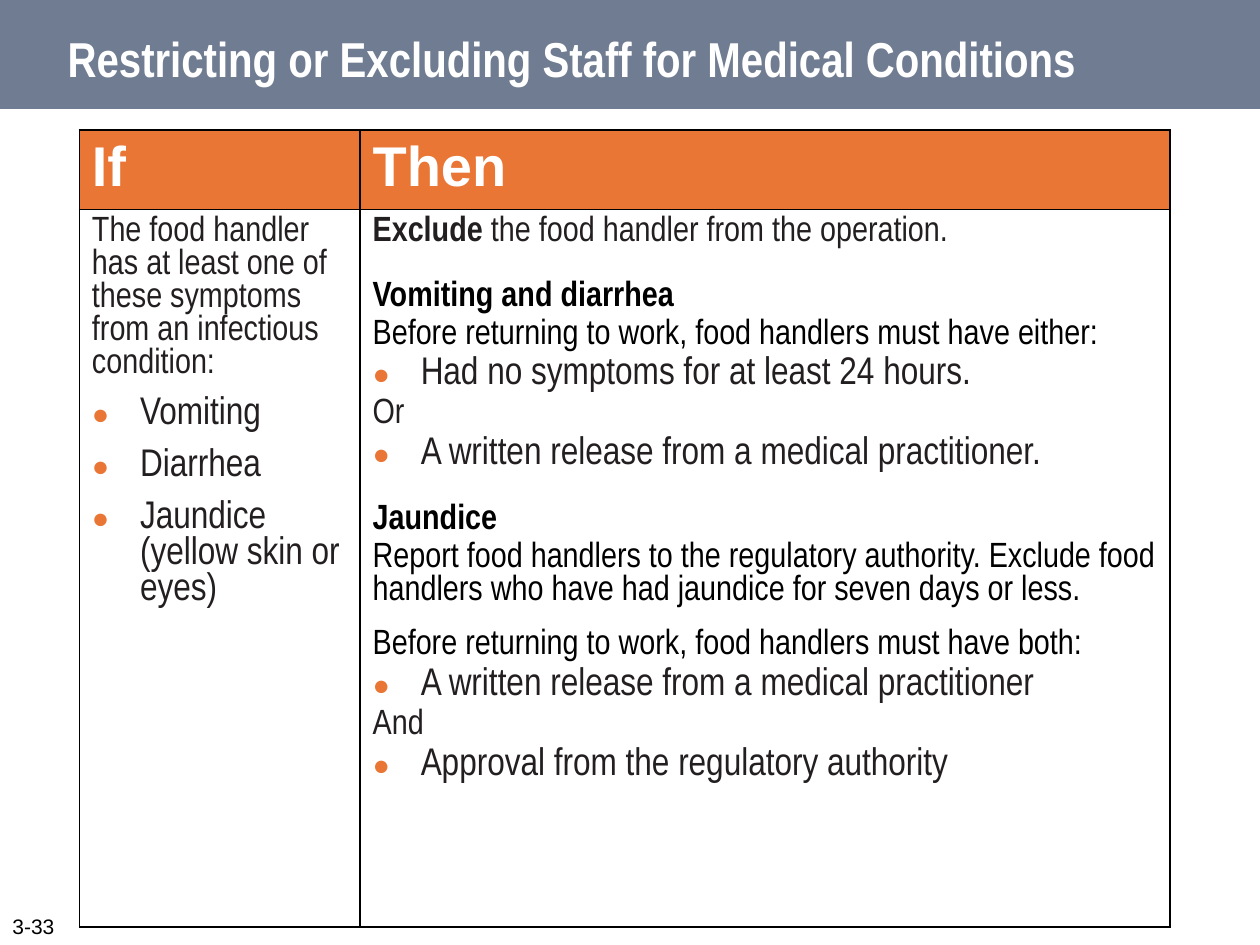
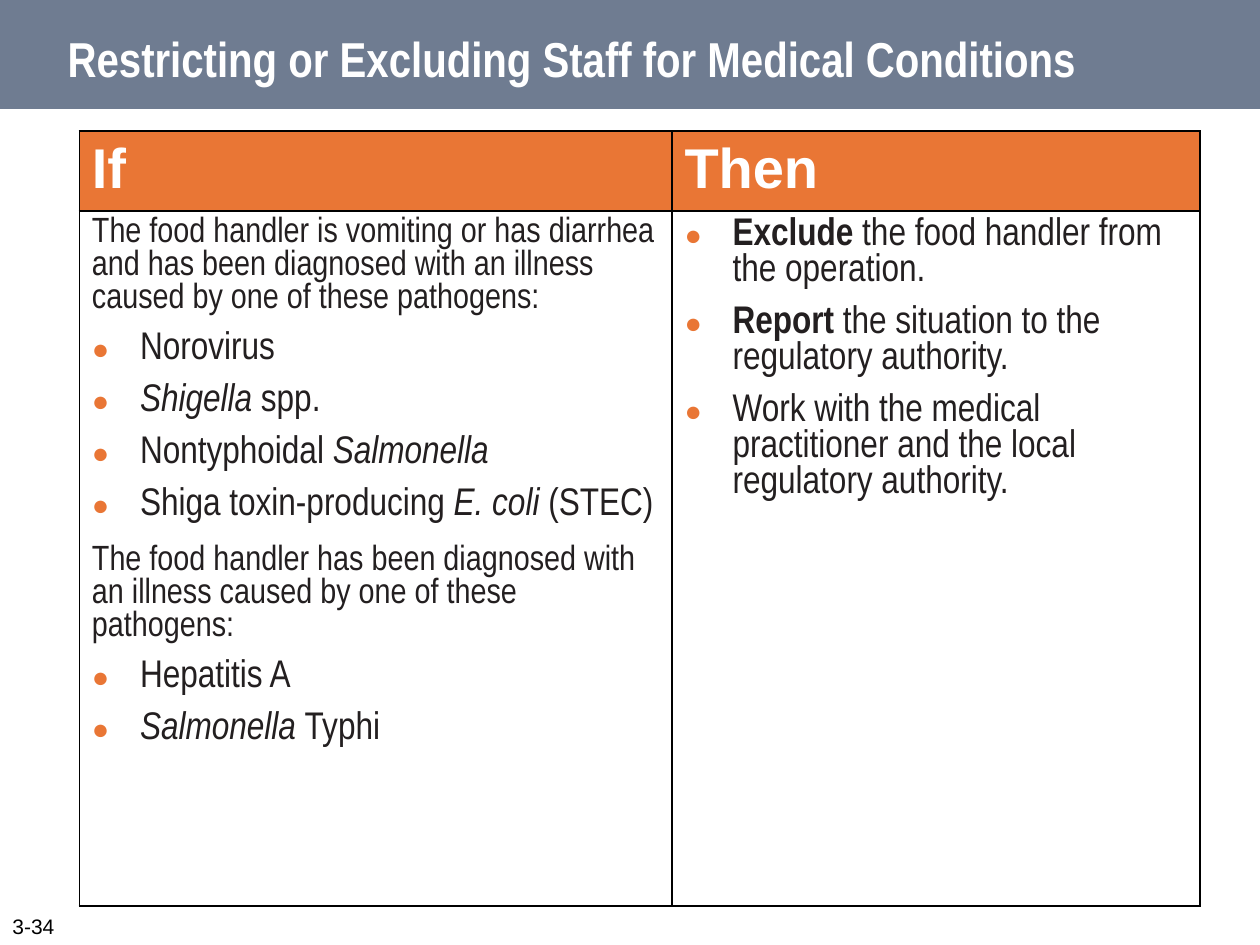
"""Build two slides on restricting or excluding food handlers for medical conditions."""
from dataclasses import dataclass

import pptx
import pptx.dml.color
import pptx.enum.shapes
import pptx.enum.text
import pptx.oxml
import pptx.oxml.ns
import pptx.presentation
import pptx.slide
import pptx.table
import pptx.text.text
import pptx.util

Pt = pptx.util.Pt
RGBColor = pptx.dml.color.RGBColor

SLATE = RGBColor(0x6F, 0x7C, 0x91)
ORANGE = RGBColor(0xE9, 0x76, 0x35)
INK = RGBColor(0x23, 0x1F, 0x20)
BLACK = RGBColor(0, 0, 0)
WHITE = RGBColor(255, 255, 255)

NARROW = "Arial Narrow"
SANS = "Arial"
TITLE = "Restricting or Excluding Staff for Medical Conditions"
HEADINGS = ("If", "Then")
SLIDE_WIDTH, SLIDE_HEIGHT = Pt(720), Pt(540)
TABLE_LEFT = Pt(45.36)
BULLET_INDENT = Pt(27.5)
BORDER_WIDTH = Pt(1)


@dataclass(frozen=True)
class Style:
    """The look of one kind of paragraph."""

    size: int
    color: RGBColor
    font: str = NARROW
    bold: bool = False
    bullet: bool = False


@dataclass(frozen=True)
class Span:
    """A stretch of text with its own emphasis."""

    text: str
    bold: bool | None = None
    italic: bool | None = None


@dataclass(frozen=True)
class Para:
    """A paragraph of plain strings and emphasised spans."""

    style: Style
    spans: tuple[str | Span, ...]
    space_before: float = 0


@dataclass(frozen=True)
class ConditionSlide:
    """The table measures and texts of one slide."""

    number: str
    top: float
    column_widths: tuple[float, float]
    row_heights: tuple[float, float]
    symptoms: list[Para]
    actions: list[Para]


TITLE_STYLE = Style(28, WHITE, bold=True)
NUMBER_STYLE = Style(12, BLACK, SANS)
HEADER_STYLE = Style(32, WHITE, SANS, bold=True)
BODY_STYLE = Style(20, INK)
RULE_STYLE = Style(20, BLACK)
TOPIC_STYLE = Style(20, BLACK, bold=True)
BULLET_STYLE = Style(22, INK, bullet=True)


def body(*spans: str | Span, space: float = 0) -> Para:
    """Return a body paragraph."""
    return Para(BODY_STYLE, spans, space)


def rule(text: str, space: float = 3) -> Para:
    """Return a paragraph that states a rule."""
    return Para(RULE_STYLE, (text,), space)


def topic(text: str) -> Para:
    """Return a bold heading inside a cell."""
    return Para(TOPIC_STYLE, (text,), 18)


def bullet(*spans: str | Span, space: float = 9) -> Para:
    """Return a bulleted paragraph."""
    return Para(BULLET_STYLE, spans, space)


def strong(text: str) -> Span:
    """Return a bold span."""
    return Span(text, bold=True)


def species(text: str) -> Span:
    """Return an italic span."""
    return Span(text, italic=True)


SLIDES = [
    ConditionSlide(
        "3-33", 74.16, (160.4, 462.7), (28.8, 409.9),
        [
            body("The food handler has at least one of these symptoms from an infectious condition:"),
            bullet("Vomiting"),
            bullet("Diarrhea"),
            bullet("Jaundice (yellow skin or eyes)"),
        ],
        [
            body(strong("Exclude"), " the food handler from the operation."),
            topic("Vomiting and diarrhea"),
            rule("Before returning to work, food handlers must have either:"),
            bullet("Had no symptoms for at least 24 hours.", space=3),
            body("Or", space=3),
            bullet("A written release from a medical practitioner.", space=3),
            topic("Jaundice"),
            rule("Report food handlers to the regulatory authority. Exclude food handlers "
                 "who have had jaundice for seven days or less."),
            rule("Before returning to work, food handlers must have both:", space=12),
            bullet("A written release from a medical practitioner", space=3),
            body("And", space=3),
            bullet("Approval from the regulatory authority", space=3),
        ],
    ),
    ConditionSlide(
        "3-34", 74.88, (338.6, 301.7), (31.68, 397.2),
        [
            body("The food handler is vomiting or has diarrhea and has been diagnosed "
                 "with an illness caused by one of these pathogens:"),
            bullet("Norovirus"),
            bullet(species("Shigella"), " spp."),
            bullet("Nontyphoidal ", species("Salmonella")),
            bullet("Shiga toxin-producing ", species("E. coli "), "(STEC)"),
            body("The food handler has been diagnosed with an illness caused by one of these pathogens:",
                 space=12),
            bullet("Hepatitis A"),
            bullet(species("Salmonella "), "Typhi"),
        ],
        [
            bullet(strong("Exclude"), " the food handler from the operation.", space=0),
            bullet(strong("Report"), " the situation to the regulatory authority."),
            bullet("Work with the medical practitioner and the local regulatory authority."),
        ],
    ),
]


def add_bullet(paragraph: pptx.text.text._Paragraph) -> None:
    """Give a paragraph an orange dot and a hanging indent."""
    properties = paragraph._p.get_or_add_pPr()
    properties.set("marL", str(BULLET_INDENT))
    properties.set("indent", str(-BULLET_INDENT))
    namespace = pptx.oxml.ns.nsdecls("a")
    for xml in (
        f'<a:buClr {namespace}><a:srgbClr val="{ORANGE}"/></a:buClr>',
        f'<a:buSzPct {namespace} val="75000"/>',
        f'<a:buFont {namespace} typeface="{SANS}"/>',
        f'<a:buChar {namespace} char="●"/>',
    ):
        properties.append(pptx.oxml.parse_xml(xml))


def write(frame: pptx.text.text.TextFrame, paras: list[Para]) -> None:
    """Fill a text frame with styled paragraphs."""
    for index, para in enumerate(paras):
        paragraph = frame.add_paragraph() if index else frame.paragraphs[0]
        style = para.style
        paragraph.alignment = pptx.enum.text.PP_ALIGN.LEFT
        paragraph.space_before = Pt(para.space_before)
        if style.bullet:
            add_bullet(paragraph)
        paragraph.font.name = style.font
        paragraph.font.size = Pt(style.size)
        paragraph.font.bold = style.bold
        paragraph.font.color.rgb = style.color
        for item in para.spans:
            span = Span(item) if isinstance(item, str) else item
            run = paragraph.add_run()
            run.text = span.text
            run.font.bold = span.bold
            run.font.italic = span.italic


def anchor_bottom(frame: pptx.text.text.TextFrame) -> None:
    """Set a wrapping text frame at the bottom of a box that grows with it."""
    frame.word_wrap = True
    frame.vertical_anchor = pptx.enum.text.MSO_ANCHOR.BOTTOM
    frame.auto_size = pptx.enum.text.MSO_AUTO_SIZE.SHAPE_TO_FIT_TEXT


def add_band(page: pptx.slide.Slide) -> None:
    """Place the title band behind everything else on the page."""
    band = page.shapes.add_shape(
        pptx.enum.shapes.MSO_SHAPE.RECTANGLE, 0, 0, SLIDE_WIDTH, Pt(62.3))
    band.shadow.inherit = False
    band.fill.solid()
    band.fill.fore_color.rgb = SLATE
    band.line.fill.background()
    page.shapes.element.insert(2, band.element)


def add_title(page: pptx.slide.Slide) -> None:
    """Move the title placeholder onto the band and fill it."""
    title = page.shapes.title
    title.left, title.top, title.width, title.height = Pt(31.5), Pt(12.5), Pt(654.48), Pt(41.04)
    anchor_bottom(title.text_frame)
    write(title.text_frame, [Para(TITLE_STYLE, (TITLE,))])


def add_number(page: pptx.slide.Slide, number: str) -> None:
    """Add the page number in the lower left corner."""
    box = page.shapes.add_textbox(0, Pt(518.4), Pt(44.64), Pt(21.6))
    anchor_bottom(box.text_frame)
    write(box.text_frame, [Para(NUMBER_STYLE, (number,))])


def add_borders(cell: pptx.table._Cell) -> None:
    """Draw a black line on each side of a cell."""
    properties = cell._tc.get_or_add_tcPr()
    for side in "LRTB":
        properties.append(pptx.oxml.parse_xml(
            f'<a:ln{side} {pptx.oxml.ns.nsdecls("a")} w="{BORDER_WIDTH}">'
            f'<a:solidFill><a:srgbClr val="{BLACK}"/></a:solidFill></a:ln{side}>'))


def add_condition_table(page: pptx.slide.Slide, content: ConditionSlide) -> None:
    """Add the table that pairs symptoms with actions."""
    table = page.shapes.add_table(
        2, 2, TABLE_LEFT, Pt(content.top),
        Pt(sum(content.column_widths)), Pt(sum(content.row_heights))).table
    table.horz_banding = False
    for column, width in zip(table.columns, content.column_widths):
        column.width = Pt(width)
    for row, height in zip(table.rows, content.row_heights):
        row.height = Pt(height)
    for index, paras in enumerate((content.symptoms, content.actions)):
        header, detail = table.cell(0, index), table.cell(1, index)
        add_borders(header)
        add_borders(detail)
        header.fill.solid()
        header.fill.fore_color.rgb = ORANGE
        detail.fill.background()
        write(header.text_frame, [Para(HEADER_STYLE, (HEADINGS[index],))])
        write(detail.text_frame, paras)


def main() -> None:
    """Build and save the deck."""
    deck = pptx.Presentation()
    deck.slide_width, deck.slide_height = SLIDE_WIDTH, SLIDE_HEIGHT
    title_only = deck.slide_layouts[5]
    for content in SLIDES:
        page = deck.slides.add_slide(title_only)
        add_band(page)
        add_title(page)
        add_number(page, content.number)
        add_condition_table(page, content)
    deck.save("out.pptx")


if __name__ == "__main__":
    main()
